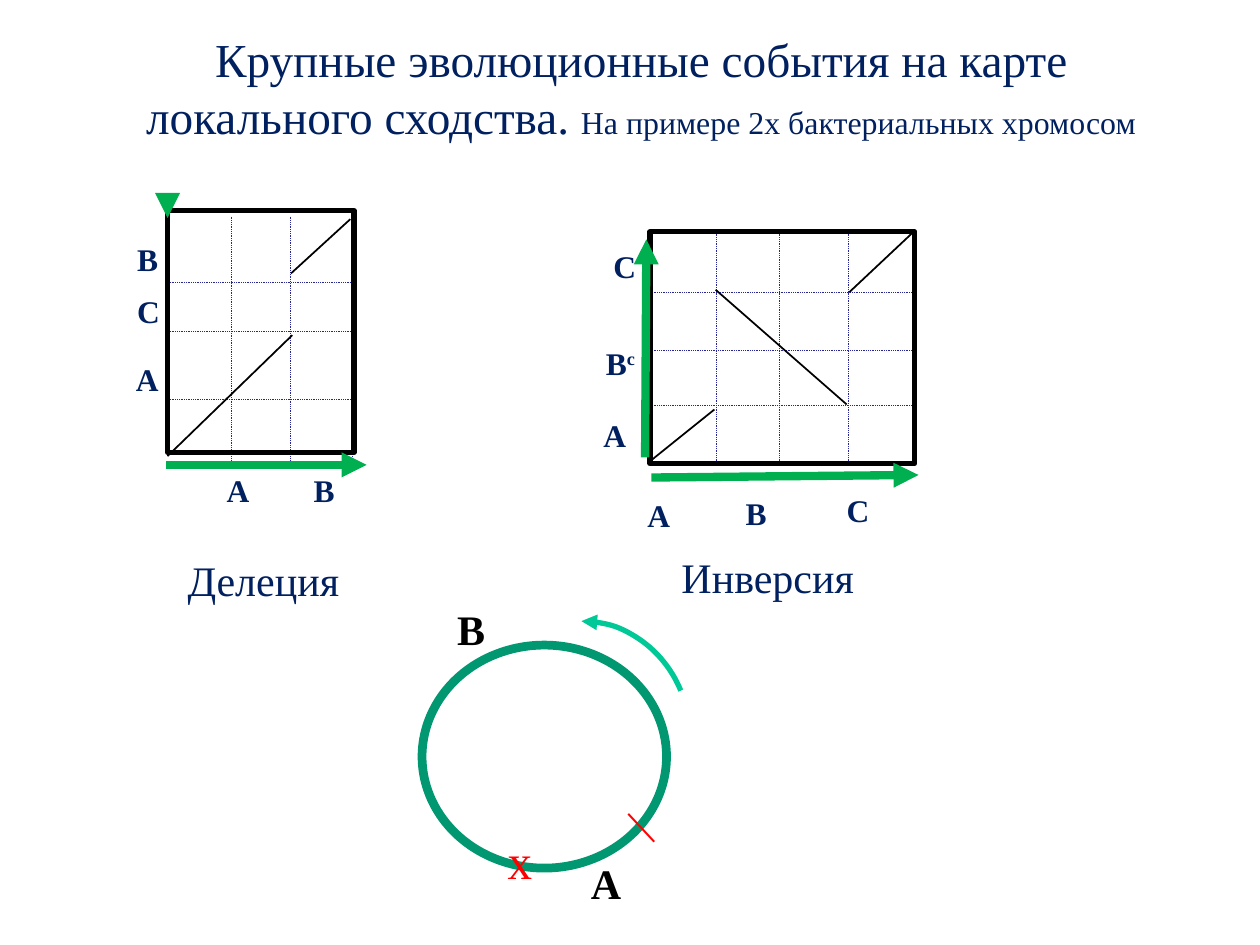
from lxml.etree import SubElement
from pptx import Presentation
from pptx.dml.color import RGBColor
from pptx.enum.dml import MSO_LINE
from pptx.enum.shapes import MSO_CONNECTOR, MSO_SHAPE
from pptx.enum.text import MSO_ANCHOR, MSO_AUTO_SIZE, PP_ALIGN
from pptx.oxml.ns import qn
from pptx.util import Inches, Pt

FONT = "Times New Roman"
NAVY = RGBColor(0x00, 0x20, 0x60)
BLACK = RGBColor(0x00, 0x00, 0x00)
RED = RGBColor(0xFF, 0x00, 0x00)
GRID = RGBColor(0x26, 0x26, 0x99)
AXIS = RGBColor(0x00, 0xB0, 0x50)
RING = RGBColor(0x00, 0x97, 0x71)
TURN = RGBColor(0x00, 0xC8, 0x96)

# Frame and grid boxes are left, top, width, height; columns and rows are
# shares of the grid box; matches and axes are lines given by their two ends.
DELETION = {
    "frame": (1.33, 1.67, 1.48, 1.92),
    "grid": (1.32, 1.72, 1.51, 1.93),
    "columns": (0.34, 0.65, 0.98),
    "rows": (0.27, 0.47, 0.75),
    "matches": [((1.33, 3.62), (2.32, 2.66)), ((2.31, 2.17), (2.78, 1.74))],
    "axes": [((1.33, 1.66), (1.33, 1.73)), ((1.32, 3.69), (2.91, 3.69))],
    "labels": [("B", 0.99, 1.86), ("С", 0.99, 2.27), ("A", 0.98, 2.81),
               ("A", 1.7, 3.69), ("B", 2.39, 3.69)],
}
INVERSION = {
    "frame": (5.16, 1.84, 2.1, 1.84),
    "grid": (5.16, 1.84, 2.1, 1.84),
    "columns": (0.25, 0.49, 0.75),
    "rows": (0.26, 0.51, 0.75),
    "matches": [((5.16, 3.66), (5.67, 3.25)), ((5.68, 2.3), (6.72, 3.21)),
                ((6.74, 2.32), (7.24, 1.85))],
    "axes": [((5.12, 3.63), (5.13, 1.9)), ((5.17, 3.79), (7.29, 3.77))],
    "labels": [("C", 4.77, 1.91), ("B", 4.71, 2.68, "c"), ("A", 4.69, 3.25),
               ("A", 5.04, 3.89), ("B", 5.82, 3.87), ("C", 6.62, 3.85)],
}


def add_run(p, text, size, color, bold=False):
    r = p.add_run()
    r.text = text
    for name, value in {"name": FONT, "size": Pt(size), "bold": bold}.items():
        setattr(r.font, name, value)
    r.font.color.rgb = color
    return r


def add_label(shapes, text, box, size, color, bold=False, wrap=False):
    sp = shapes.add_textbox(*map(Inches, box))
    tf = sp.text_frame
    tf.word_wrap = wrap
    add_run(tf.paragraphs[0], text, size, color, bold)
    return sp


def add_arrowhead(line, end):
    """Put a triangle on the line; end is headEnd (start) or tailEnd (finish)."""
    SubElement(line.line._get_or_add_ln(), qn(f"a:{end}"), type="triangle")


def add_line(shapes, start, end, color, width):
    c = shapes.add_connector(MSO_CONNECTOR.STRAIGHT, *map(Inches, start + end))
    c.line.color.rgb = color
    c.line.width = Pt(width)
    SubElement(c._element.spPr, qn("a:effectLst"))
    return c


def add_outline(shapes, kind, box, color, width):
    sp = shapes.add_shape(kind, *map(Inches, box))
    sp.shadow.inherit = False
    sp.fill.background()
    sp.line.color.rgb = color
    sp.line.width = Pt(width)
    return sp


def add_title(s):
    sp = s.shapes.title
    box = {"left": 0.78, "top": 0.37, "width": 8.62, "height": 0.64}
    for name, value in box.items():
        setattr(sp, name, Inches(value))
    tf = sp.text_frame
    tf.auto_size = MSO_AUTO_SIZE.NONE
    tf.vertical_anchor = MSO_ANCHOR.MIDDLE
    p = tf.paragraphs[0]
    p.alignment = PP_ALIGN.CENTER
    add_run(p, "Крупные эволюционные события на карте локального сходства. ",
            27, NAVY)
    add_run(p, "На примере 2х бактериальных хромосом", 18.2, NAVY)


def add_similarity_map(s, plot):
    shapes = s.shapes.add_group_shape().shapes
    left, top, width, height = plot["grid"]
    xs = [left + share * width for share in plot["columns"]]
    ys = [top + share * height for share in plot["rows"]]
    grid = [((x, top), (x, top + height)) for x in xs]
    grid += [((left, y), (left + width, y)) for y in ys]
    for start, end in grid:
        c = add_line(shapes, start, end, GRID, 0.5)
        c.line.dash_style = MSO_LINE.ROUND_DOT
    add_outline(shapes, MSO_SHAPE.RECTANGLE, plot["frame"], BLACK, 3)
    for start, end in plot["matches"]:
        add_line(shapes, start, end, BLACK, 1)
    for text, x, y, *power in plot["labels"]:
        sp = add_label(shapes, text, (x, y, 0.45 if power else 0.38, 0.4),
                       18, NAVY, bold=True, wrap=True)
        for mark in power:
            r = add_run(sp.text_frame.paragraphs[0], mark, 18, NAVY, True)
            r.font._element.set("baseline", "30000")
    for start, end in plot["axes"]:
        add_arrowhead(add_line(shapes, start, end, AXIS, 4.75), "tailEnd")


def add_chromosome(s):
    shapes = s.shapes.add_group_shape().shapes
    add_label(shapes, "B", (3.53, 4.74, 0.39, 0.5), 24, BLACK, bold=True)
    add_label(shapes, "A", (4.59, 6.76, 0.41, 0.5), 24, BLACK, bold=True)
    add_outline(shapes, MSO_SHAPE.OVAL, (3.35, 5.12, 1.94, 1.77), RING, 5)
    add_label(shapes, "x", (3.93, 6.54, 0.37, 0.57), 28, RED)
    cut = add_label(shapes, "|", (4.87, 6.14, 0.68, 0.5), 24, RED, wrap=True)
    cut.rotation = 317
    arc = add_outline(shapes, MSO_SHAPE.ARC, (3.75, 4.93, 1.73, 1.87), TURN, 3)
    arc.adjustments[0], arc.adjustments[1] = 162, 200.45
    add_arrowhead(arc, "headEnd")


def main():
    prs = Presentation()
    prs.slide_width, prs.slide_height = Inches(10), Inches(7.5)
    s = prs.slides.add_slide(prs.slide_layouts[5])
    add_title(s)
    for plot in (INVERSION, DELETION):
        add_similarity_map(s, plot)
    add_label(s.shapes, "Делеция", (1.39, 4.35, 1.42, 0.5), 24, NAVY)
    add_label(s.shapes, "Инверсия", (5.31, 4.33, 1.58, 0.5), 24, NAVY)
    add_chromosome(s)
    prs.save("out.pptx")


if __name__ == "__main__":
    main()
